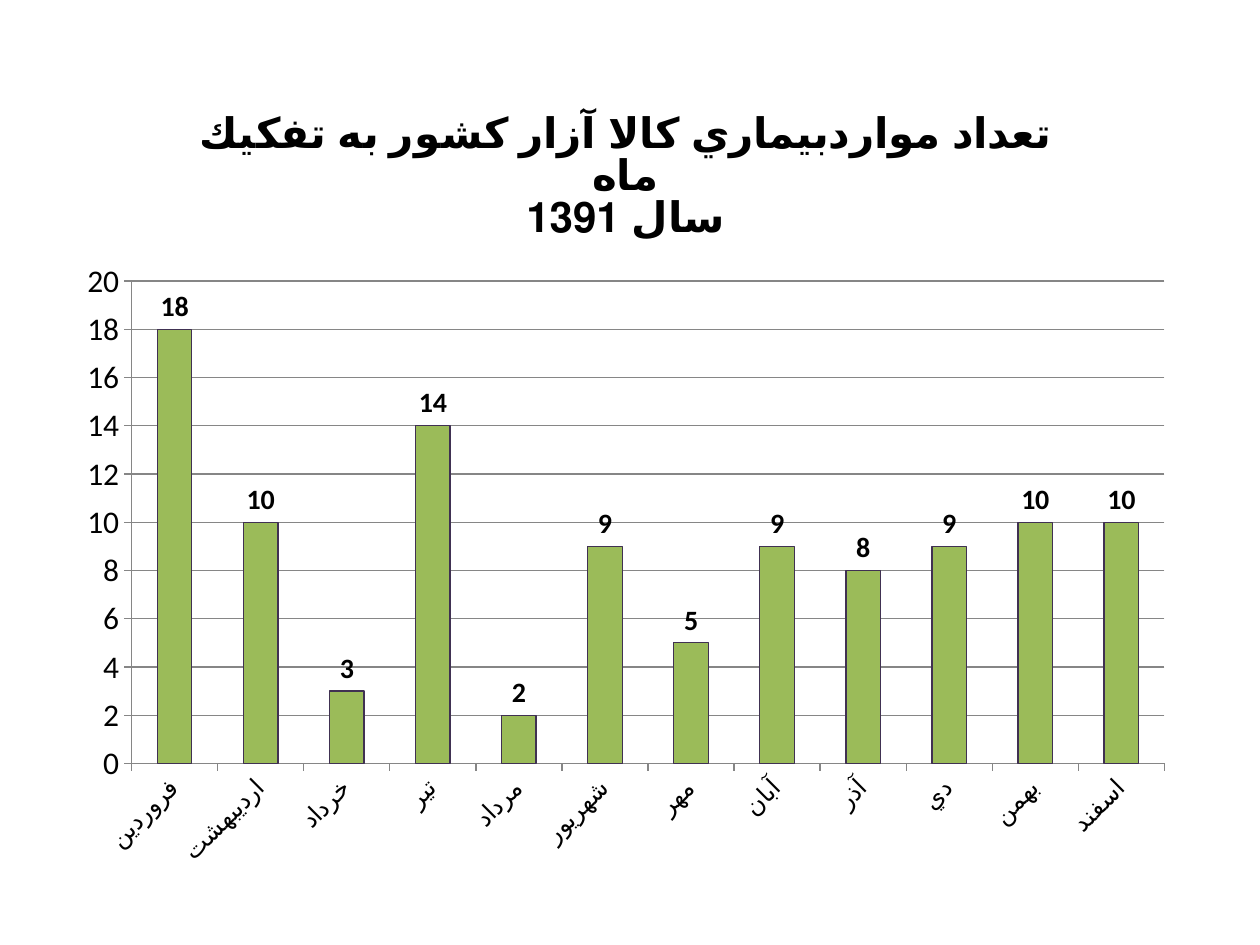
from dataclasses import dataclass

from lxml import etree
from pptx import Presentation
from pptx.chart.data import CategoryChartData
from pptx.dml.color import RGBColor
from pptx.enum import chart as ch
from pptx.oxml import ns
from pptx.util import Inches, Pt


@dataclass(frozen=True)
class Theme:
    font: str = "Calibri"
    ink: RGBColor = RGBColor(0, 0, 0)
    bar: RGBColor = RGBColor(0x9B, 0xBB, 0x59)
    outline: RGBColor = RGBColor(0x40, 0x31, 0x52)
    grid: RGBColor = RGBColor(0x86, 0x86, 0x86)
    title: int = 24
    body: int = 18
    label: int = 16
    month: int = 14


THEME = Theme()
TITLE = ("تعداد مواردبيماري كالا آزار كشور به تفكيك ماه", "سال 1391")
CASES = {
    "فروردين": 18, "ارديبهشت": 10, "خرداد": 3, "تير": 14,
    "مرداد": 2, "شهريور": 9, "مهر": 5, "آبان": 9,
    "آذر": 8, "دي": 9, "بهمن": 10, "اسفند": 10,
}


def style_font(font, size, bold=False):
    font.name = THEME.font
    font.size = Pt(size)
    font.bold = bold
    font.color.rgb = THEME.ink


def style_line(line, color):
    line.color.rgb = color
    line.width = Pt(0.75)


def add_title(chart):
    tf = chart.chart_title.text_frame
    chart.chart_title.include_in_layout = False
    for i, text in enumerate(TITLE):
        p = tf.add_paragraph() if i else tf.paragraphs[0]
        p._p.get_or_add_pPr().set("rtl", "1")
        r = p.add_run()
        r.text = text
        style_font(r.font, THEME.title, bold=True)


def style_axes(chart):
    months, counts = chart.category_axis, chart.value_axis
    for axis, size in ((months, THEME.month), (counts, THEME.body)):
        style_font(axis.tick_labels.font, size)
        style_line(axis.format.line, THEME.grid)
        axis.major_tick_mark = ch.XL_TICK_MARK.OUTSIDE
    months._element.txPr.find(ns.qn("a:bodyPr")).set("rot", "-2700000")
    counts.minimum_scale, counts.maximum_scale, counts.major_unit = 0, 20, 2
    counts.has_major_gridlines = True
    style_line(counts.major_gridlines.format.line, THEME.grid)


def style_bars(plot):
    plot.gap_width = 150
    plot.vary_by_categories = False
    bars = plot.series[0]
    bars.format.fill.solid()
    bars.format.fill.fore_color.rgb = THEME.bar
    style_line(bars.format.line, THEME.outline)
    labels = bars.data_labels
    labels.show_value = True
    labels.position = ch.XL_LABEL_POSITION.OUTSIDE_END
    style_font(labels.font, THEME.label, bold=True)


def place_plot(chart, x, y, w, h):
    area = chart._chartSpace.chart.plotArea
    for old in area.findall(ns.qn("c:layout")):
        area.remove(old)
    layout = etree.Element(ns.qn("c:layout"))
    manual = etree.SubElement(layout, ns.qn("c:manualLayout"))
    settings = dict(layoutTarget="inner", xMode="edge", yMode="edge", x=x, y=y, w=w, h=h)
    for tag, value in settings.items():
        etree.SubElement(manual, ns.qn(f"c:{tag}")).set("val", str(value))
    area.insert(0, layout)


def add_cases_chart(slide, left, top, width, height):
    data = CategoryChartData()
    data.categories = list(CASES)
    data.add_series("Series 1", list(CASES.values()))
    chart = slide.shapes.add_chart(
        ch.XL_CHART_TYPE.COLUMN_CLUSTERED, left, top, width, height, data
    ).chart
    chart.has_legend = False
    style_font(chart.font, THEME.body)
    add_title(chart)
    style_axes(chart)
    style_bars(chart.plots[0])
    place_plot(chart, x=0.06, y=0.245, w=0.92, h=0.605)


def main():
    prs = Presentation()
    prs.slide_width, prs.slide_height = Inches(10), Inches(7.5)
    s = prs.slides.add_slide(prs.slide_layouts[6])
    add_cases_chart(s, Inches(0.51), Inches(0.68), Inches(8.91), Inches(6.33))
    prs.save("out.pptx")


if __name__ == "__main__":
    main()
